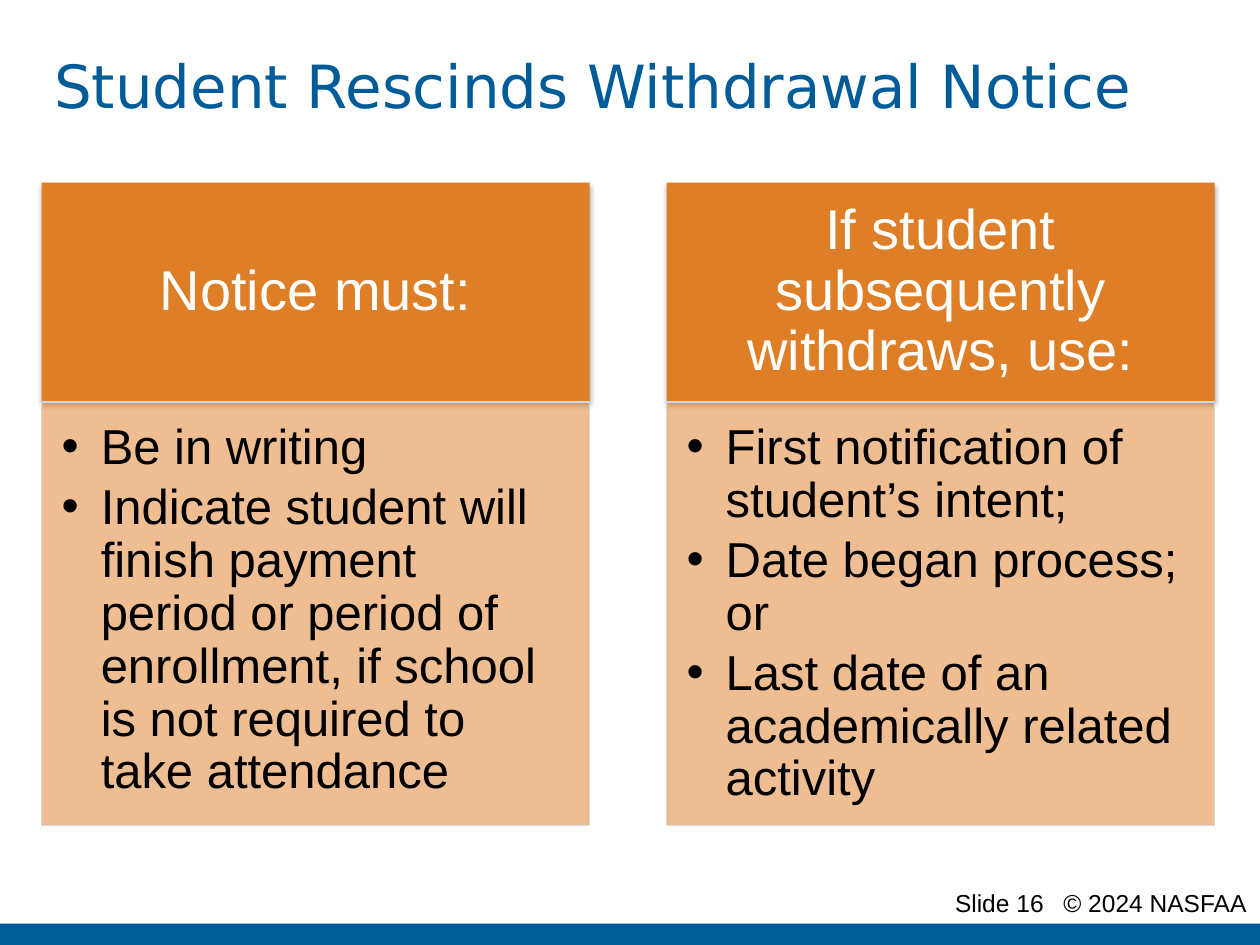
import pptx
import pptx.dml.color
import pptx.enum.shapes
import pptx.enum.text
import pptx.oxml
import pptx.oxml.ns
import pptx.util
from lxml import etree

Inches, Pt = pptx.util.Inches, pptx.util.Pt
RGBColor = pptx.dml.color.RGBColor
PP_ALIGN, MSO_ANCHOR = pptx.enum.text.PP_ALIGN, pptx.enum.text.MSO_ANCHOR

BLUE = RGBColor(0x00, 0x5B, 0x99)
ORANGE = RGBColor(0xDE, 0x7E, 0x26)
PALE_LINE = RGBColor(0xD0, 0xD8, 0xE8)
WHITE = RGBColor(0xFF, 0xFF, 0xFF)
BLACK = RGBColor(0x00, 0x00, 0x00)

SLIDE_W, SLIDE_H = 10, 7.5
MARGIN = 0.33
COLUMN_W, COLUMN_PITCH = 4.35, 4.96
HEADER_TOP, HEADER_H, BODY_H = 1.45, 1.74, 3.36
BULLET_INDENT = 0.31

COLUMNS = [
    ("Notice must:", [
        "Be in writing",
        "Indicate student will finish payment period or period of enrollment, "
        "if school is not required to take attendance",
    ]),
    ("If student subsequently withdraws, use:", [
        "First notification of student’s intent;",
        "Date began process; or",
        "Last date of an academically related activity",
    ]),
]


def add_child(parent, tag, **attributes):
    return etree.SubElement(parent, pptx.oxml.ns.qn(tag), attributes)


def add_box(slide, left, top, width, height, fill):
    box = slide.shapes.add_shape(
        pptx.enum.shapes.MSO_SHAPE.RECTANGLE,
        Inches(left), Inches(top), Inches(width), Inches(height))
    box.shadow.inherit = False
    box.fill.solid()
    box.fill.fore_color.rgb = fill
    box.line.fill.background()
    return box


def set_frame(frame, anchor, left, top, right, bottom):
    """Wrap the text, anchor it and set its insets in inches."""
    frame.word_wrap = True
    frame.vertical_anchor = anchor
    frame.margin_left, frame.margin_top = Inches(left), Inches(top)
    frame.margin_right, frame.margin_bottom = Inches(right), Inches(bottom)


def set_font(paragraph, name, size, color):
    paragraph.font.name = name
    paragraph.font.size = Pt(size)
    paragraph.font.color.rgb = color


def add_soft_shadow(box):
    effects = box._element.spPr.find(pptx.oxml.ns.qn("a:effectLst"))
    shadow = add_child(effects, "a:outerShdw", blurRad=str(Pt(3.1)),
                       dist=str(Pt(1.8)), dir="5400000", rotWithShape="0")
    color = add_child(shadow, "a:srgbClr", val="000000")
    add_child(color, "a:alpha", val="35000")


def make_half_transparent(box):
    color = box._element.spPr.find(
        pptx.oxml.ns.qn("a:solidFill") + "/" + pptx.oxml.ns.qn("a:srgbClr"))
    add_child(color, "a:alpha", val="50000")


def add_bullet(paragraph):
    properties = paragraph._p.get_or_add_pPr()
    properties.set("marL", str(Inches(BULLET_INDENT)))
    properties.set("indent", str(-Inches(BULLET_INDENT)))
    add_child(properties, "a:buFont", typeface="Arial")
    add_child(properties, "a:buChar", char="•")


def add_header(slide, left, heading):
    header = add_box(slide, left, HEADER_TOP, COLUMN_W, HEADER_H, ORANGE)
    add_soft_shadow(header)
    set_frame(header.text_frame, MSO_ANCHOR.MIDDLE, 0.25, 0.14, 0.25, 0.14)
    paragraph = header.text_frame.paragraphs[0]
    paragraph.text = heading
    paragraph.alignment = PP_ALIGN.CENTER
    paragraph.line_spacing = 0.9
    set_font(paragraph, "Arial", 32, WHITE)


def add_body(slide, left, points):
    body = add_box(slide, left, HEADER_TOP + HEADER_H, COLUMN_W, BODY_H, ORANGE)
    make_half_transparent(body)
    body.line.color.rgb = PALE_LINE
    body.line.width = Pt(0.75)
    frame = body.text_frame
    set_frame(frame, MSO_ANCHOR.TOP, 0.16, 0.16, 0.22, 0.24)
    for index, point in enumerate(points):
        paragraph = frame.add_paragraph() if index else frame.paragraphs[0]
        paragraph.text = point
        paragraph.alignment = PP_ALIGN.LEFT
        paragraph.line_spacing = 0.9
        paragraph.space_after = Pt(4)
        add_bullet(paragraph)
        set_font(paragraph, "Arial", 28, BLACK)


def format_title(slide, text):
    title = slide.shapes.title
    title.left, title.top = Inches(MARGIN), Inches(0.17)
    title.width, title.height = Inches(9.3), Inches(1)
    frame = title.text_frame
    frame.auto_size = pptx.enum.text.MSO_AUTO_SIZE.NONE
    frame.vertical_anchor = MSO_ANCHOR.MIDDLE
    paragraph = frame.paragraphs[0]
    paragraph.text = text
    paragraph.alignment = PP_ALIGN.LEFT
    set_font(paragraph, "DejaVu Sans", 34, BLUE)


def add_footer(slide):
    add_box(slide, 0, 7.33, SLIDE_W, SLIDE_H - 7.33, BLUE)
    footer = slide.shapes.add_textbox(
        Inches(7), Inches(7), Inches(3), Inches(0.25))
    set_frame(footer.text_frame, MSO_ANCHOR.TOP, 0.58, 0.05, 0, 0.05)
    paragraph = footer.text_frame.paragraphs[0]
    paragraph.text = "Slide 16\t© 2024 NASFAA"
    tabs = add_child(paragraph._p.get_or_add_pPr(), "a:tabLst")
    add_child(tabs, "a:tab", pos=str(Inches(0.86)), algn="l")
    set_font(paragraph, "Arial", 14, BLACK)


def main():
    deck = pptx.Presentation()
    deck.slide_width, deck.slide_height = Inches(SLIDE_W), Inches(SLIDE_H)
    slide = deck.slides.add_slide(deck.slide_layouts.get_by_name("Title Only"))
    add_footer(slide)
    format_title(slide, "Student Rescinds Withdrawal Notice")
    for column, (heading, points) in enumerate(COLUMNS):
        left = MARGIN + column * COLUMN_PITCH
        add_header(slide, left, heading)
        add_body(slide, left, points)
    deck.save("out.pptx")


if __name__ == "__main__":
    main()
